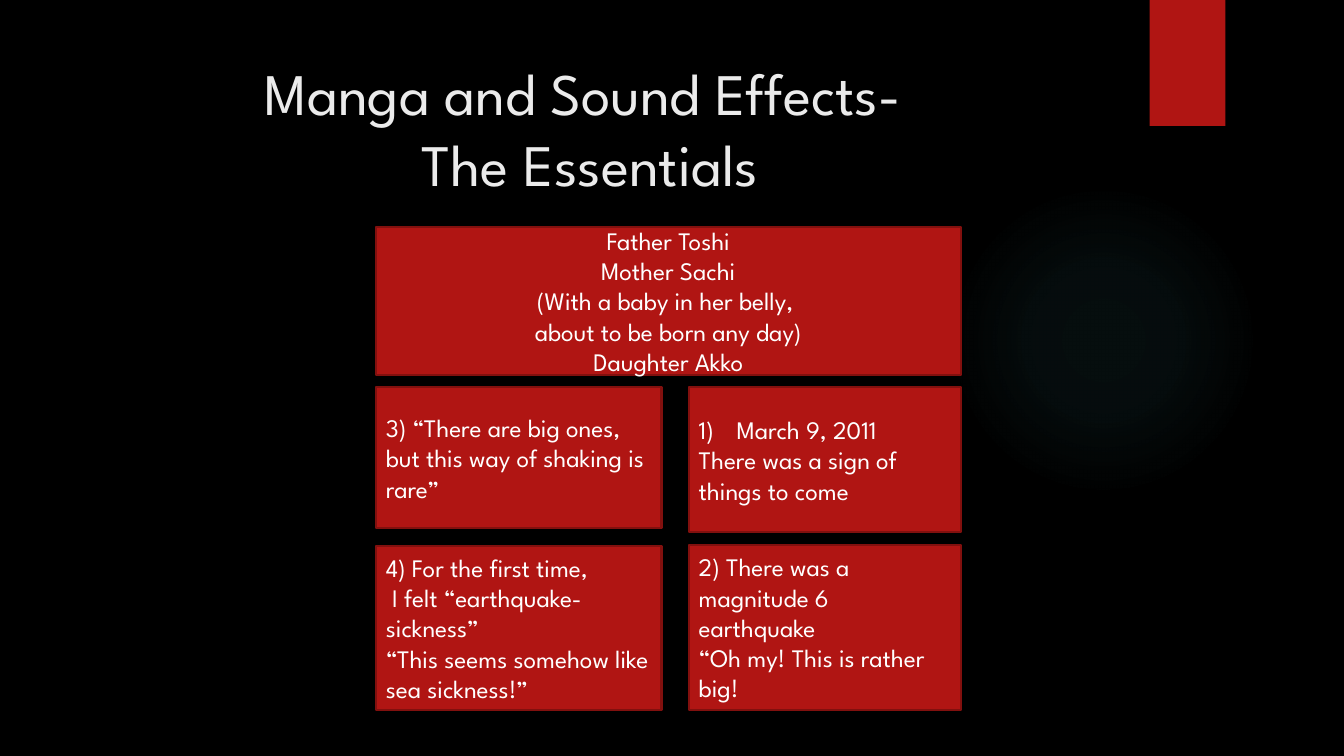
from lxml import etree
from pptx import Presentation, util as u
from pptx.dml.color import RGBColor
from pptx.enum import shapes, text
from pptx.oxml import ns, parse_xml

PX = 9525
FONT = "League Spartan"
RED, DARK_RED, TEAL = "B01513", "82100E", "50B9C1"
WHITE, OFF_WHITE, BLACK = "FFFFFF", "EBEBEB", "000000"

LEFT_X, LEFT_W = 358, 272
RIGHT_X, RIGHT_W = 656, 259
FAMILY = ["Father Toshi", "Mother Sachi", "(With a baby in her belly, ",
          "about to be born any day)", "Daughter Akko"]
PANELS = [
    ((RIGHT_X, 369, RIGHT_W, 138),
     ["March 9, 2011", "There was a sign of things to come"]),
    ((RIGHT_X, 519, RIGHT_W, 157),
     ["2) There was a magnitude 6 earthquake", "“Oh my! This is rather big!"]),
    ((LEFT_X, 369, LEFT_W, 134),
     ["3) “There are big ones, but this way of shaking is rare”"]),
    ((LEFT_X, 520, LEFT_W, 156),
     ["4) For the first time,", " I felt “earthquake- sickness”",
      "“This seems somehow like sea sickness!”"]),
]


def color(value):
    return RGBColor.from_string(value)


def emu(box):
    return [u.Emu(length * PX) for length in box]


def add_run(paragraph, words, size, ink):
    run = paragraph.add_run()
    run.text = words
    run.font.name = FONT
    run.font.size = u.Pt(size)
    run.font.color.rgb = color(ink)


def add_block(slide, box, fill, kind=shapes.MSO_SHAPE.RECTANGLE):
    block = slide.shapes.add_shape(kind, *emu(box))
    block.shadow.inherit = False
    block.fill.solid()
    block.fill.fore_color.rgb = color(fill)
    block.line.fill.background()
    return block


def add_glow(slide, box):
    """Add a circle whose faint teal fades out from its centre."""
    glow = add_block(slide, box, TEAL, shapes.MSO_SHAPE.OVAL)
    stops = "".join(
        f'<a:gs pos="{place * 1000}"><a:srgbClr val="{TEAL}">'
        f'<a:alpha val="{alpha * 1000}"/></a:srgbClr></a:gs>'
        for place, alpha in ((0, 7), (36, 6), (69, 0)))
    gradient = parse_xml(
        f'<a:gradFill {ns.nsdecls("a")}><a:gsLst>{stops}</a:gsLst>'
        '<a:path path="circle"><a:fillToRect l="50000" t="50000" '
        'r="50000" b="50000"/></a:path></a:gradFill>')
    properties = glow.fill._xPr
    properties.replace(properties.find(ns.qn("a:solidFill")), gradient)


def add_title(slide, box, lines):
    frame = slide.shapes.add_textbox(*emu(box)).text_frame
    frame.word_wrap = True
    frame.vertical_anchor = text.MSO_ANCHOR.MIDDLE
    heading = frame.paragraphs[0]
    heading.alignment = text.PP_ALIGN.CENTER
    for index, line in enumerate(lines):
        if index:
            heading.add_line_break()
        add_run(heading, line, 42, OFF_WHITE)


def add_panel(slide, box, lines, align=text.PP_ALIGN.LEFT):
    panel = add_block(slide, box, RED)
    panel.line.color.rgb = color(DARK_RED)
    panel.line.width = u.Pt(1.5)
    frame = panel.text_frame
    frame.word_wrap = True
    frame.vertical_anchor = text.MSO_ANCHOR.MIDDLE
    for index, line in enumerate(lines):
        paragraph = frame.add_paragraph() if index else frame.paragraphs[0]
        paragraph.alignment = align
        add_run(paragraph, line, 18, WHITE)
    return panel


def number_paragraph(paragraph, indent):
    properties = paragraph._p.get_or_add_pPr()
    properties.set("marL", str(indent * PX))
    properties.set("indent", str(-indent * PX))
    etree.SubElement(properties, ns.qn("a:buFont"), typeface="+mj-lt")
    etree.SubElement(properties, ns.qn("a:buAutoNum"), type="arabicParenR")


def main():
    deck = Presentation()
    deck.slide_width, deck.slide_height = emu((1280, 720))
    slide = deck.slides.add_slide(deck.slide_layouts[6])
    slide.background.fill.solid()
    slide.background.fill.fore_color.rgb = color(BLACK)

    add_glow(slide, (903, 176, 296, 296))
    add_block(slide, (1095, 0, 72, 120), RED)
    add_title(slide, (68, 48, 988, 147),
              ["Manga and Sound Effects- ", "The Essentials"])
    add_panel(slide, (LEFT_X, 216, RIGHT_X + RIGHT_W - LEFT_X, 141),
              FAMILY, text.PP_ALIGN.CENTER)
    first, *_ = [add_panel(slide, box, lines) for box, lines in PANELS]
    number_paragraph(first.text_frame.paragraphs[0], 36)
    deck.save("out.pptx")


if __name__ == "__main__":
    main()
